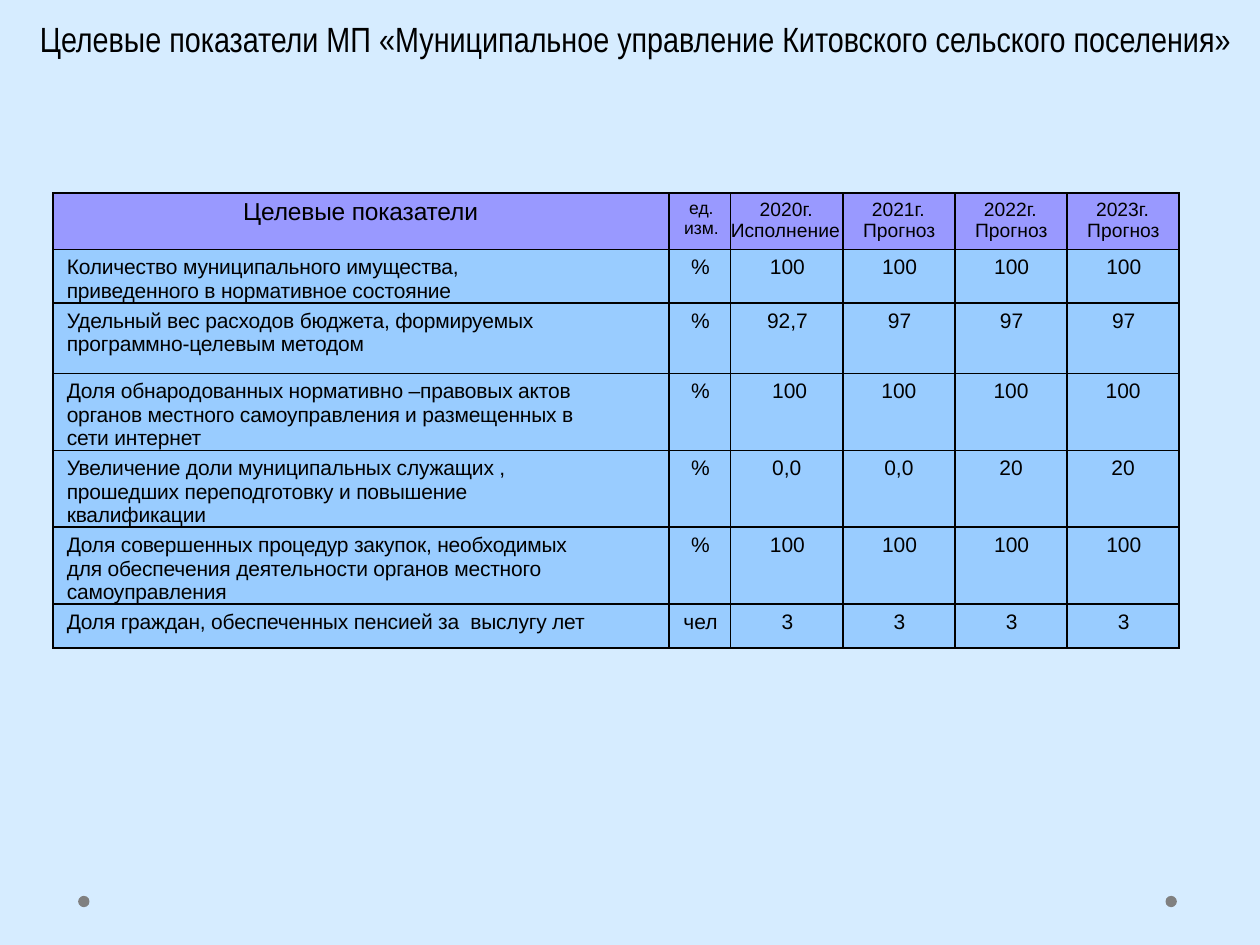
from lxml import etree
from pptx import Presentation
from pptx.dml.color import RGBColor
from pptx.enum.shapes import MSO_SHAPE
from pptx.enum.text import MSO_ANCHOR, MSO_AUTO_SIZE, PP_ALIGN
from pptx.oxml.ns import qn
from pptx.util import Inches, Pt

OVAL = MSO_SHAPE.OVAL
TOP = MSO_ANCHOR.TOP
LEFT, CENTER = PP_ALIGN.LEFT, PP_ALIGN.CENTER
NO_FIT = MSO_AUTO_SIZE.NONE

COLORS = {"background": "D6ECFF", "header": "9999FF", "body": "99CCFF",
          "text": "000000", "border": "000000", "dot": "808080"}

TITLE = "Целевые показатели МП «Муниципальное управление Китовского сельского поселения»"
COL_WIDTHS = [4.89, 0.49] + [0.89] * 4
ROW_HEIGHTS = [0.45, 0.42, 0.56, 0.42, 0.42, 0.42, 0.35]
YEARS = [("2020г.", "Исполнение", 0), ("2021г.", "Прогноз", 0.16),
         ("2022г.", "Прогноз", 0.16), ("2023г.", "Прогноз", 0.16)]
# Label, unit, yearly values, first-line indent of the values
INDICATORS = [
    ("Количество муниципального имущества, приведенного в нормативное состояние",
     "%", ["100"] * 4, 0),
    ("Удельный вес расходов бюджета, формируемых программно-целевым методом",
     "%", ["92,7", "97", "97", "97"], 0),
    ("Доля обнародованных нормативно –правовых актов органов местного "
     "самоуправления и размещенных в сети интернет",
     "%", [" 100", "100", "100", "100"], -0.22),
    ("Увеличение доли муниципальных служащих , прошедших переподготовку "
     "и повышение квалификации",
     "%", ["0,0", "0,0", "20", "20"], -0.22),
    ("Доля совершенных процедур закупок, необходимых для обеспечения "
     "деятельности органов местного самоуправления",
     "%", ["100"] * 4, 0),
    ("Доля граждан, обеспеченных пенсией за  выслугу лет",
     "чел", ["3"] * 4, 0),
]


def rgb(name):
    return RGBColor.from_string(COLORS[name])


def write(p, text, size, font="Arial", align=LEFT, left=0, first=0, before=0,
          spacing=0):
    """Put one run in a paragraph; indents in inches, spacing in 1/100 pt."""
    p.alignment = align
    p.space_before = Pt(before)
    pPr = p._p.get_or_add_pPr()
    pPr.set("marL", str(Inches(left)))
    pPr.set("indent", str(Inches(first)))
    r = p.add_run()
    r.text = text
    r.font.size = Pt(size)
    r.font.name = font
    r.font.color.rgb = rgb("text")
    if spacing:
        r._r.get_or_add_rPr().set("spc", str(spacing))


def style_cell(cell, fill, top=0.05, right=0):
    cell.margin_left = cell.margin_bottom = 0
    cell.margin_top, cell.margin_right = Inches(top), Inches(right)
    cell.vertical_anchor = TOP
    tcPr = cell._tc.get_or_add_tcPr()
    for side in ("lnL", "lnR", "lnT", "lnB"):
        ln = etree.SubElement(tcPr, qn("a:" + side), w=str(Pt(1)))
        solid = etree.SubElement(ln, qn("a:solidFill"))
        etree.SubElement(solid, qn("a:srgbClr"), val=COLORS["border"])
    cell.fill.solid()
    cell.fill.fore_color.rgb = rgb(fill)
    return cell.text_frame


def add_title(s, x, y, w, h):
    sp = s.shapes.title
    sp.left, sp.top, sp.width, sp.height = map(Inches, (x, y, w, h))
    tf = sp.text_frame
    tf.word_wrap = True
    tf.auto_size = NO_FIT
    tf.vertical_anchor = TOP
    write(tf.paragraphs[0], TITLE, 20, "Arial Narrow", CENTER)


def fill_header(table):
    tf = style_cell(table.cell(0, 0), "header", top=0.04)
    write(tf.paragraphs[0], "Целевые показатели", 14, left=1.51, before=3.1,
          spacing=-10)
    tf = style_cell(table.cell(0, 1), "header")
    write(tf.paragraphs[0], "ед. изм.", 10, left=0.12, first=0.04, before=3.3)
    for col, (year, kind, indent) in enumerate(YEARS, start=2):
        tf = style_cell(table.cell(0, col), "header")
        write(tf.paragraphs[0], year, 11, left=0.23, before=3.2)
        write(tf.add_paragraph(), kind, 11, left=indent)


def fill_indicator(table, row, label, unit, values, first):
    tf = style_cell(table.cell(row, 0), "body", right=0.6)
    write(tf.paragraphs[0], label, 12, left=0.11, before=3.3, spacing=-10)
    for col, text in enumerate([unit] + values, start=1):
        tf = style_cell(table.cell(row, col), "body")
        write(tf.paragraphs[0], text, 12, align=CENTER, left=0.01,
              first=first if col > 1 else 0, before=3.3)


def add_indicator_table(s, x, y):
    table = s.shapes.add_table(
        len(ROW_HEIGHTS), len(COL_WIDTHS), Inches(x), Inches(y),
        Inches(sum(COL_WIDTHS)), Inches(sum(ROW_HEIGHTS))).table
    for column, width in zip(table.columns, COL_WIDTHS):
        column.width = Inches(width)
    for row, height in zip(table.rows, ROW_HEIGHTS):
        row.height = Inches(height)
    fill_header(table)
    for row, indicator in enumerate(INDICATORS, start=1):
        fill_indicator(table, row, *indicator)


def add_footer_dots(s, y, size, lefts):
    for x in lefts:
        sp = s.shapes.add_shape(OVAL, Inches(x), Inches(y), Inches(size), Inches(size))
        sp.shadow.inherit = False
        sp.fill.solid()
        sp.fill.fore_color.rgb = rgb("dot")
        sp.line.fill.background()


def main():
    prs = Presentation()
    prs.slide_width, prs.slide_height = Inches(10), Inches(7.5)
    s = prs.slides.add_slide(prs.slide_layouts[5])  # title only
    s.background.fill.solid()
    s.background.fill.fore_color.rgb = rgb("background")

    add_footer_dots(s, 7.11, 0.09, (0.62, 9.25))
    add_indicator_table(s, 0.42, 1.53)
    add_title(s, 0.17, 0.09, 9.75, 1.11)
    prs.save("out.pptx")


if __name__ == "__main__":
    main()
